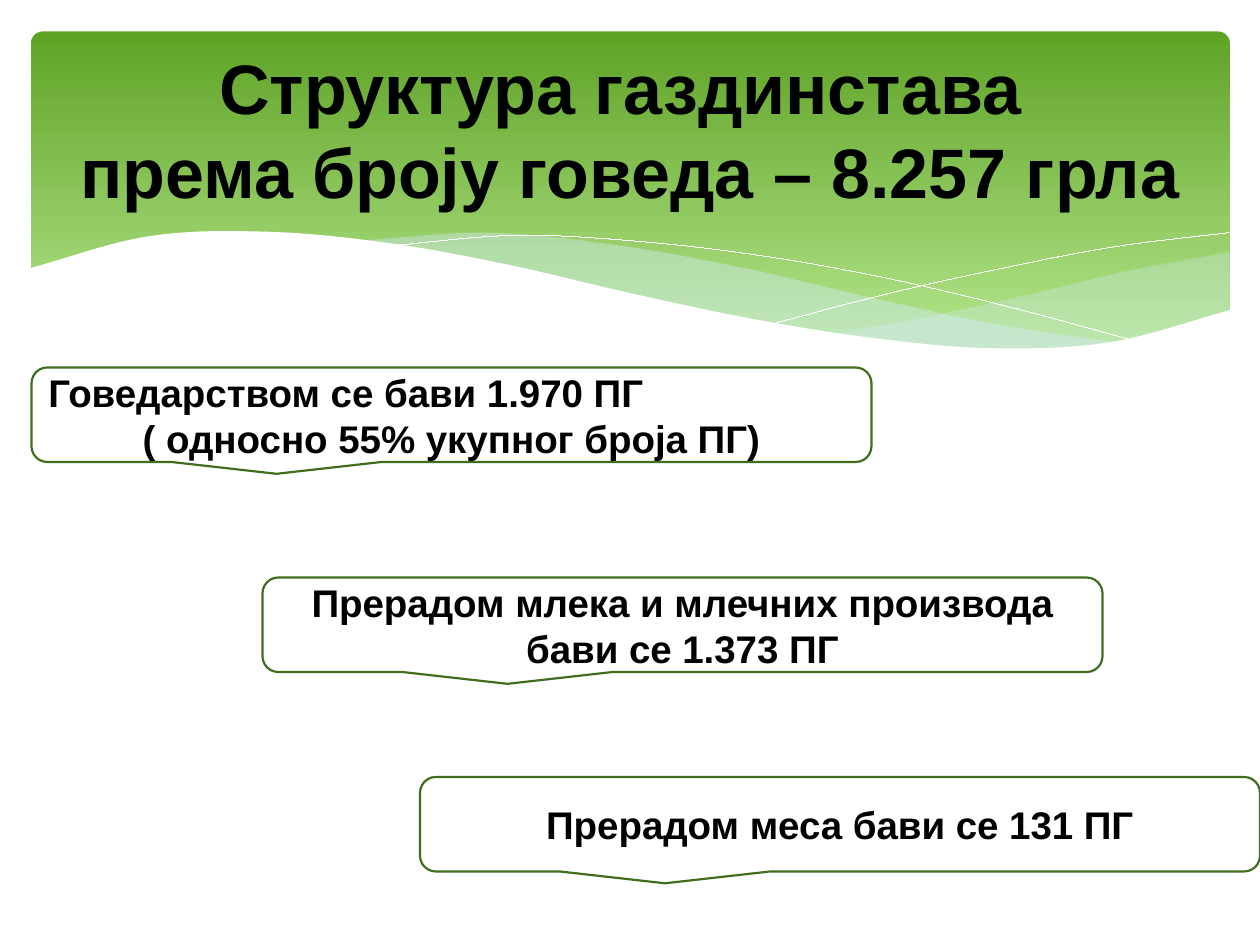
from lxml.etree import SubElement
from pptx import Presentation
from pptx.dml.color import RGBColor
from pptx.enum.shapes import MSO_SHAPE
from pptx.enum.text import MSO_ANCHOR, PP_ALIGN
from pptx.oxml.ns import qn
from pptx.util import Pt

WHITE = RGBColor(0xFF, 0xFF, 0xFF)
BLACK = RGBColor(0x00, 0x00, 0x00)
BANNER_TOP = RGBColor(0x5F, 0xA3, 0x26)
BANNER_BOTTOM = RGBColor(0xB2, 0xE3, 0x89)
WAVE_TINT = RGBColor(0xD6, 0xEC, 0xFF)
CALLOUT_EDGE = RGBColor(0x42, 0x6D, 0x1F)

FONT = "Arial"
STEPS_PER_SPAN = 8
HAIRLINE = Pt(0.01)
CALLOUT_WIDTH, CALLOUT_HEIGHT = Pt(480), Pt(54)


def smooth_curve(left, right, heights):
    """Points of a Catmull-Rom curve through heights spaced evenly from left to right."""
    spans = len(heights) - 1
    before = 2 * heights[0] - heights[1]
    after = 2 * heights[-1] - heights[-2]
    knots = [before, *heights, after]
    points = []
    for step in range(spans * STEPS_PER_SPAN + 1):
        span = min(step // STEPS_PER_SPAN, spans - 1)
        t = step / STEPS_PER_SPAN - span
        a, b, c, d = knots[span:span + 4]
        y = b + t / 2 * (c - a + t * (2 * a - 5 * b + 4 * c - d
                                      + t * (3 * (b - c) + d - a)))
        x = left + (right - left) * step / (spans * STEPS_PER_SPAN)
        points.append((x, y))
    return points


def band(left, right, upper, lower):
    """Closed outline between an upper and a lower curve."""
    return smooth_curve(left, right, upper) + smooth_curve(left, right, lower)[::-1]


def add_outline(slide, points, close):
    start, *rest = [(Pt(x), Pt(y)) for x, y in points]
    builder = slide.shapes.build_freeform(*start)
    builder.add_line_segments(rest, close=close)
    outline = builder.convert_to_shape()
    outline.shadow.inherit = False
    return outline


def add_wave(slide, points, color, opacity=100):
    wave = add_outline(slide, points, close=True)
    wave.line.fill.background()
    wave.fill.solid()
    wave.fill.fore_color.rgb = color
    if opacity < 100:
        tint = wave.fill._xPr.find(".//" + qn("a:srgbClr"))
        SubElement(tint, qn("a:alpha"), val=str(opacity * 1000))


def add_wave_line(slide, points):
    wave_line = add_outline(slide, points, close=False)
    wave_line.fill.background()
    wave_line.line.color.rgb = WHITE
    wave_line.line.width = HAIRLINE


def add_banner(slide):
    banner = slide.shapes.add_shape(
        MSO_SHAPE.ROUNDED_RECTANGLE, Pt(17.75), Pt(18), Pt(685), Pt(194.5))
    banner.adjustments[0] = 0.034
    banner.shadow.inherit = False
    banner.line.fill.background()
    banner.fill.gradient()
    banner.fill.gradient_angle = 270
    top, bottom = banner.fill.gradient_stops
    top.position, top.color.rgb = 0, BANNER_TOP
    bottom.position, bottom.color.rgb = 0.9, BANNER_BOTTOM


def add_waves(slide):
    # Translucent bands
    right_band = band(476, 702.7,
                      upper=[191, 180.5, 168, 154.5, 144],
                      lower=[191, 197.5, 200, 194.5, 178])
    middle_band = band(206, 643,
                       upper=[137.5, 133, 140, 153, 170, 185.5, 196.5],
                       lower=[137.5, 149.5, 166, 182, 194.5, 200, 196.5])
    add_wave(slide, right_band, WAVE_TINT, opacity=29)
    add_wave(slide, middle_band, WAVE_TINT, opacity=40)

    # Thin crossing lines: one falling, one rising
    add_wave_line(slide, smooth_curve(222.5, 653, [140.5, 134.5, 138, 146.5, 159.5, 176.5, 196]))
    add_wave_line(slide, smooth_curve(441.5, 702, [185, 168, 153.5, 141, 133]))

    # White wave that cuts off the banner's lower edge
    left, right, floor = 16.5, 703.5, 237
    crest = smooth_curve(
        left, right, [153.5, 135, 132.5, 139, 151.5, 167.5, 182, 193, 199, 195.5, 177])
    add_wave(slide, crest + [(right, floor), (left, floor)], WHITE)


def write(frame, paragraphs, size):
    frame.word_wrap = True
    frame.vertical_anchor = MSO_ANCHOR.MIDDLE
    frame.text = "\n".join(text for text, _ in paragraphs)
    for paragraph, (_, alignment) in zip(frame.paragraphs, paragraphs):
        paragraph.alignment = alignment
        paragraph.font.name = FONT
        paragraph.font.size = Pt(size)
        paragraph.font.bold = True
        paragraph.font.color.rgb = BLACK


def add_title(slide, text):
    title = slide.shapes.add_textbox(Pt(36), Pt(26.5), Pt(648), Pt(93.5))
    write(title.text_frame, [(text, PP_ALIGN.CENTER)], 40)


def add_callout(slide, left, top, paragraphs):
    callout = slide.shapes.add_shape(
        MSO_SHAPE.ROUNDED_RECTANGULAR_CALLOUT,
        Pt(left), Pt(top), CALLOUT_WIDTH, CALLOUT_HEIGHT)
    callout.shadow.inherit = False
    callout.fill.solid()
    callout.fill.fore_color.rgb = WHITE
    callout.line.color.rgb = CALLOUT_EDGE
    callout.line.width = Pt(1.25)
    write(callout.text_frame, paragraphs, 22)


def main():
    deck = Presentation()
    deck.slide_width, deck.slide_height = Pt(720), Pt(540)
    slide = deck.slides.add_slide(deck.slide_layouts[6])

    # Green banner with its waves
    add_banner(slide)
    add_waves(slide)

    # Title
    add_title(slide, "Структура газдинстава \vпрема броју говеда – 8.257 грла")

    # Stepped callouts: left, top, paragraphs
    callouts = [
        (18, 210, [("Говедарством се бави 1.970 ПГ", PP_ALIGN.LEFT),
                   ("( односно 55% укупног броја ПГ)", PP_ALIGN.CENTER)]),
        (150, 330, [("Прерадом млека и млечних производа бави се 1.373 ПГ",
                     PP_ALIGN.CENTER)]),
        (240, 444, [("Прерадом меса бави се 131 ПГ", PP_ALIGN.CENTER)]),
    ]
    for left, top, paragraphs in callouts:
        add_callout(slide, left, top, paragraphs)

    deck.save("out.pptx")


if __name__ == "__main__":
    main()
